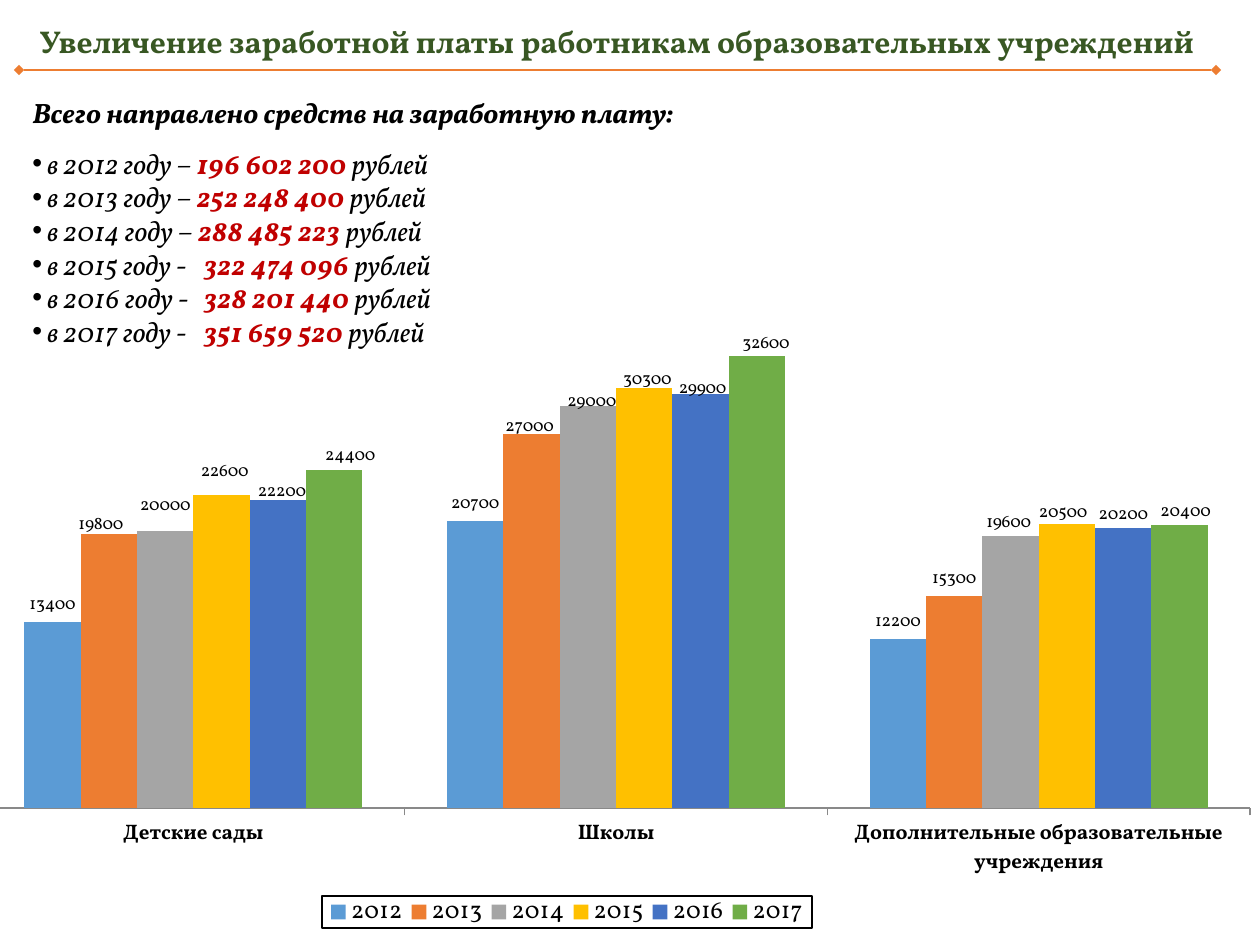
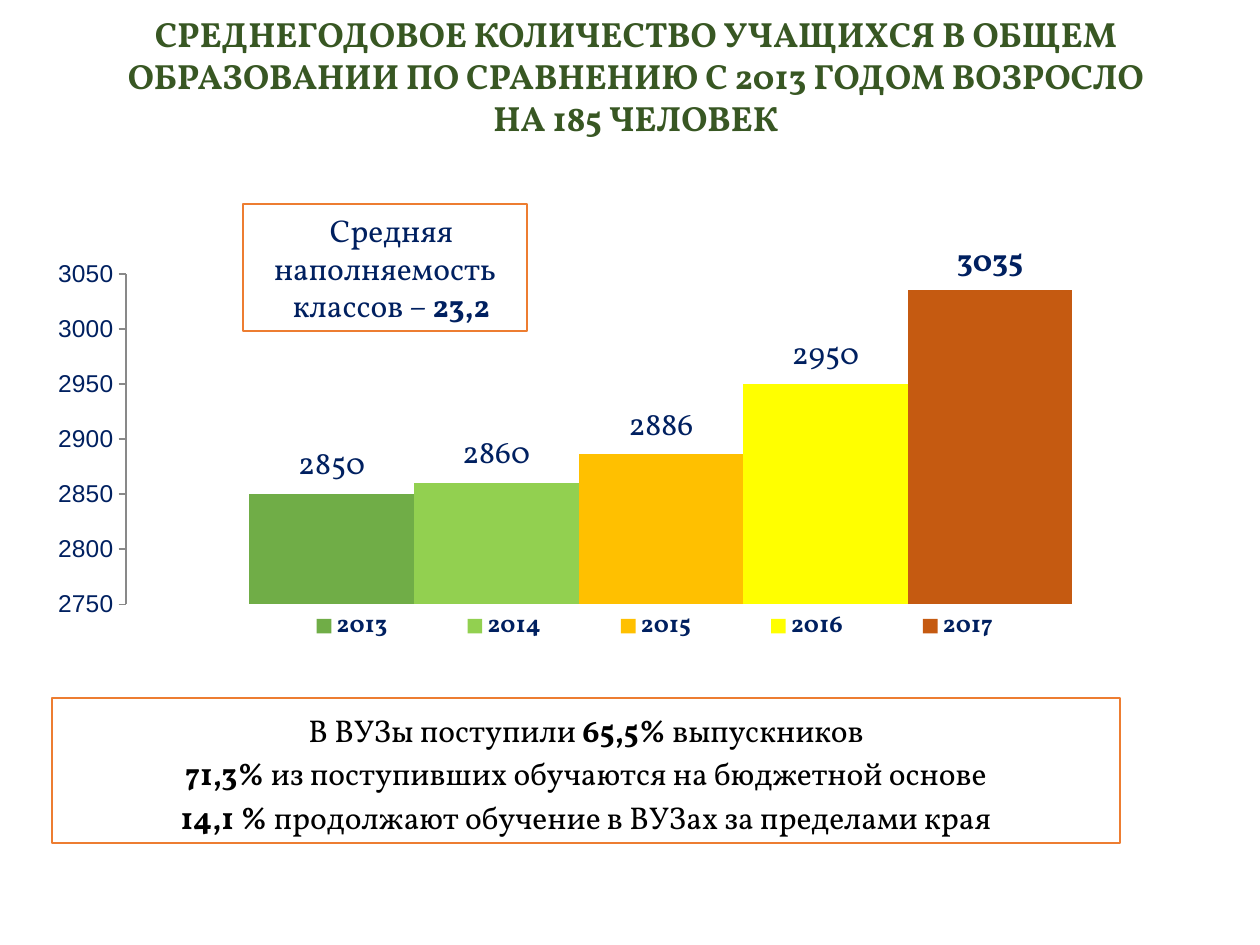
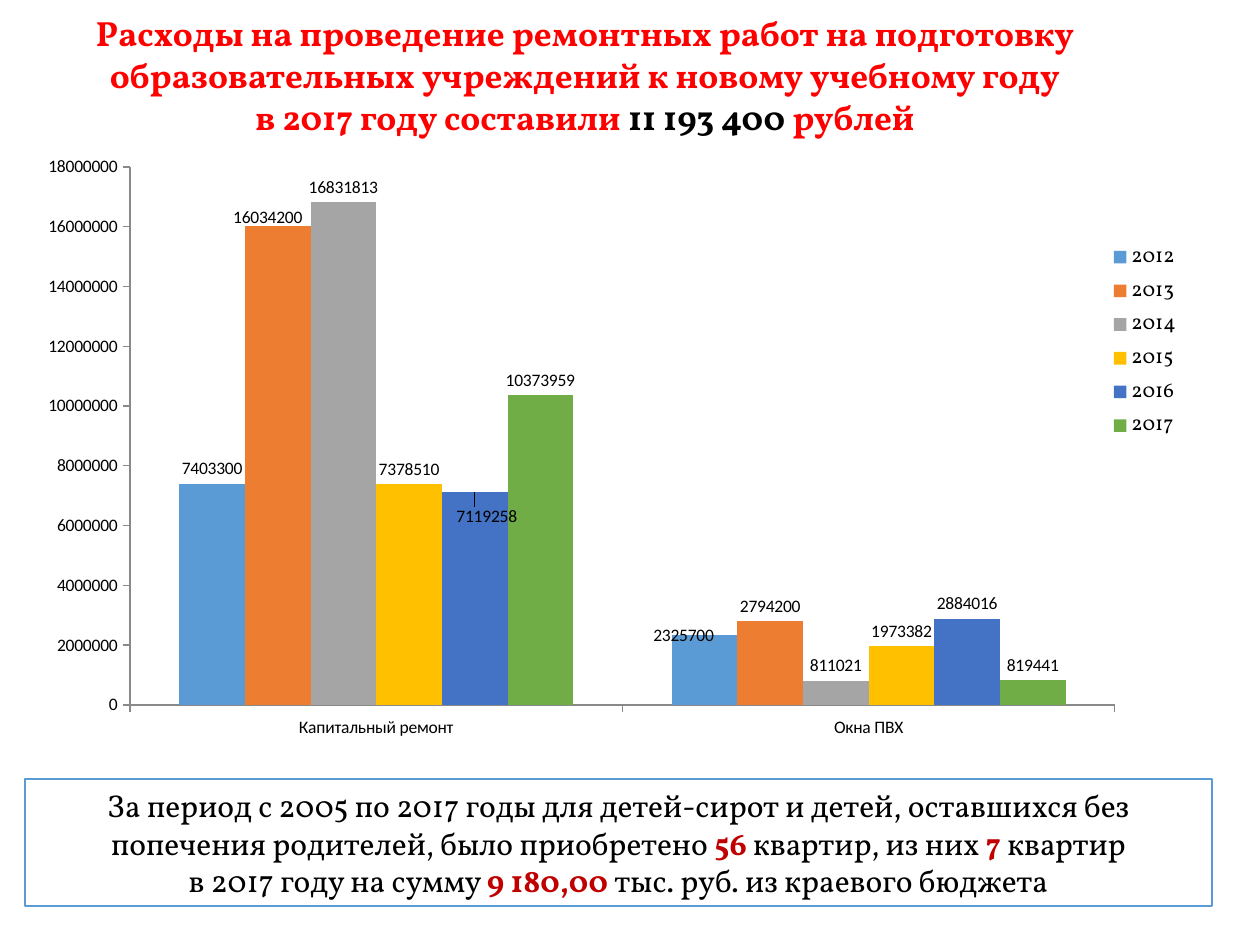
from pptx import Presentation
from pptx.chart.data import CategoryChartData
from pptx.dml.color import RGBColor
from pptx.enum.chart import XL_CHART_TYPE, XL_LABEL_POSITION, XL_LEGEND_POSITION, XL_TICK_MARK
from pptx.enum.shapes import MSO_CONNECTOR, MSO_SHAPE
from pptx.enum.text import MSO_ANCHOR, MSO_AUTO_SIZE, PP_ALIGN
from pptx.oxml import parse_xml
from pptx.oxml.ns import nsdecls, qn
from pptx.util import Pt

EMU_PER_PX = 914400 / 126
COLORS = {
    "black": "000000", "white": "FFFFFF", "title": "385723", "alert": "FF0000",
    "accent": "C00000", "navy": "002060", "axis": "898989", "blue": "5B9BD5",
    "orange": "ED7D31", "gray": "A5A5A5", "amber": "FFC000", "royal": "4472C4",
    "green": "70AD47", "lime": "92D050", "yellow": "FFFF00", "rust": "C55A11",
}
YEAR_COLORS = {"2012": "blue", "2013": "orange", "2014": "gray",
               "2015": "amber", "2016": "royal", "2017": "green"}
SERIF = "Vollkorn"
TITLE = {"size": 20, "bold": True, "color": "title"}
BODY = {"size": 18}
NUMBER = {"bold": True, "color": "accent"}
BOLD = {"bold": True}


class Deck:
    """Hold the shared style and the current slide, with a method per element."""

    def __init__(self, width, height):
        self.presentation = Presentation()
        self.presentation.slide_width = self.emu(width)
        self.presentation.slide_height = self.emu(height)
        self.slide = None

    @staticmethod
    def emu(px):
        """Turn px into EMU."""
        return round(px * EMU_PER_PX)

    @staticmethod
    def rgb(name):
        """Give the named colour."""
        return RGBColor.from_string(COLORS[name])

    def box(self, bounds):
        """Turn left, top, width and height into EMU."""
        return [self.emu(px) for px in bounds]

    def add_slide(self):
        """Start a blank slide."""
        self.slide = self.presentation.slides.add_slide(self.presentation.slide_layouts[6])

    def style(self, font, values):
        """Set font attributes from a dict over the shared defaults."""
        for name, value in {"name": SERIF, "size": 10, "color": "black", **values}.items():
            if name == "color":
                font.color.rgb = self.rgb(value)
            else:
                setattr(font, name, Pt(value) if name == "size" else value)

    def fill_text(self, frame, paragraphs, base, align=PP_ALIGN.CENTER, spacing=1.0, indent=0):
        """Fill a text frame; a run is a string or a (string, format) pair."""
        frame.word_wrap = True
        frame.auto_size = MSO_AUTO_SIZE.SHAPE_TO_FIT_TEXT
        for index, runs in enumerate(paragraphs):
            paragraph = frame.paragraphs[0] if index == 0 else frame.add_paragraph()
            paragraph.alignment = align
            paragraph.line_spacing = spacing
            if indent:
                paragraph._p.get_or_add_pPr().set("indent", str(self.emu(indent)))
            for item in runs:
                text, extra = (item, {}) if isinstance(item, str) else item
                run = paragraph.add_run()
                run.text = text
                self.style(run.font, {**base, **extra})

    def text(self, bounds, paragraphs, base, **options):
        """Add a text box."""
        frame = self.slide.shapes.add_textbox(*self.box(bounds)).text_frame
        self.fill_text(frame, paragraphs, base, **options)
        return frame

    def bullet(self, paragraph, indent, tab):
        """Give a paragraph a hanging bullet and one tab stop."""
        properties = paragraph._p.get_or_add_pPr()
        properties.set("marL", str(self.emu(indent)))
        properties.set("indent", str(-self.emu(indent)))
        for xml in (f'<a:buFont {nsdecls("a")} typeface="Arial"/>',
                    f'<a:buChar {nsdecls("a")} char="•"/>',
                    f'<a:tabLst {nsdecls("a")}><a:tab pos="{self.emu(tab)}" algn="l"/></a:tabLst>'):
            properties.append(parse_xml(xml))

    def panel(self, bounds, line, paragraphs, base, **options):
        """Add an outlined white rectangle with text."""
        shape = self.slide.shapes.add_shape(MSO_SHAPE.RECTANGLE, *self.box(bounds))
        shape.shadow.inherit = False
        shape.fill.solid()
        shape.fill.fore_color.rgb = self.rgb("white")
        shape.line.color.rgb = self.rgb(line)
        shape.line.width = Pt(1)
        shape.text_frame.vertical_anchor = MSO_ANCHOR.MIDDLE
        self.fill_text(shape.text_frame, paragraphs, base, **options)

    def rule(self, left, right, top, color):
        """Add a horizontal line with diamond ends."""
        connector = self.slide.shapes.add_connector(
            MSO_CONNECTOR.STRAIGHT, *self.box((left, top, right, top)))
        connector.line.color.rgb = self.rgb(color)
        connector.line.width = Pt(1)
        for end in ("headEnd", "tailEnd"):
            connector.line._ln.append(parse_xml(f'<a:{end} {nsdecls("a")} type="diamond"/>'))
        connector._element.spPr.append(parse_xml(f'<a:effectLst {nsdecls("a")}/>'))

    @staticmethod
    def layout(parent, index, values, target=""):
        """Place a chart part by fractions of the chart area."""
        for old in parent.findall(qn("c:layout")):
            parent.remove(old)
        modes = "" if len(values) == 2 else '<c:xMode val="edge"/><c:yMode val="edge"/>'
        sizes = "".join(f'<c:{tag} val="{value:.4f}"/>' for tag, value in zip("xywh", values))
        parent.insert(index, parse_xml(
            f'<c:layout {nsdecls("c")}><c:manualLayout>{target}{modes}{sizes}'
            '</c:manualLayout></c:layout>'))

    def chart(self, bounds, categories, values, colors, plot_area, legend_area, scale,
              label_font, legend_font, hidden=None, axis_fonts=None, offsets=None,
              point_fonts=None, legend_position=XL_LEGEND_POSITION.BOTTOM):
        """Add a clustered column chart; areas and label offsets are in px."""
        left, top, width, height = bounds
        data = CategoryChartData()
        data.categories = categories
        for name, numbers in values.items():
            data.add_series(name, numbers)
        chart = self.slide.shapes.add_chart(
            XL_CHART_TYPE.COLUMN_CLUSTERED, *self.box(bounds), data).chart
        chart.has_title = False
        self.style(chart.font, {"name": "Calibri"})

        def fractions(area):
            return ((area[0] - left) / width, (area[1] - top) / height,
                    area[2] / width, area[3] / height)

        plot = chart.plots[0]
        for name, value in {"gap_width": 150, "overlap": 0, "vary_by_categories": False}.items():
            setattr(plot, name, value)
        self.layout(chart._chartSpace.chart.plotArea, 0, fractions(plot_area),
                    '<c:layoutTarget val="inner"/>')
        self.axes(chart, scale, hidden, axis_fonts or {})

        chart.has_legend = True
        legend = chart.legend
        legend.position = legend_position
        legend.include_in_layout = False
        self.layout(legend._element, 1, fractions(legend_area))
        self.style(legend.font, legend_font)

        for series in plot.series:
            series.format.fill.solid()
            series.format.fill.fore_color.rgb = self.rgb(colors[series.name])
            font = {**label_font, **(point_fonts or {}).get(series.name, {})}
            labels = series.data_labels
            for name, value in {"show_value": True, "number_format": "0",
                                "number_format_is_linked": False,
                                "position": XL_LABEL_POSITION.OUTSIDE_END}.items():
                setattr(labels, name, value)
            self.style(labels.font, font)
            for index, offset in enumerate((offsets or {}).get(series.name, ())):
                if offset:
                    label = series.points[index].data_label
                    label.position = XL_LABEL_POSITION.OUTSIDE_END
                    self.style(label.font, font)
                    element = series._element.xpath(f"c:dLbls/c:dLbl[c:idx/@val='{index}']")[0]
                    self.layout(element, 1, (offset[0] / width, offset[1] / height))
        return chart

    def axes(self, chart, scale, hidden, fonts):
        """Format both axes and set the value scale."""
        axes = {"category": chart.category_axis, "value": chart.value_axis}
        for name, axis in axes.items():
            axis.has_major_gridlines = False
            axis.major_tick_mark = XL_TICK_MARK.OUTSIDE
            axis.minor_tick_mark = XL_TICK_MARK.NONE
            axis.format.line.color.rgb = self.rgb("axis")
            axis.visible = name != hidden
            self.style(axis.tick_labels.font, {"name": "Calibri", **fonts.get(name, {})})
        for name, value in zip(("minimum_scale", "maximum_scale", "major_unit"), scale):
            setattr(axes["value"], name, value)

    def legend_border(self, chart, color):
        """Outline the legend of a chart."""
        overlay = chart.legend._element.find(qn("c:overlay"))
        overlay.addnext(parse_xml(
            f'<c:spPr {nsdecls("c", "a")}><a:ln w="9525"><a:solidFill>'
            f'<a:srgbClr val="{COLORS[color]}"/></a:solidFill></a:ln></c:spPr>'))


def add_salaries(deck):
    """Build the slide on salaries."""
    deck.add_slide()
    deck.text((-44, 16, 1322, 50),
              [["Увеличение заработной платы работникам образовательных учреждений"]],
              {**TITLE, "size": 18})
    totals = [("2012", "– ", "196 602 200"), ("2013", "– ", "252 248 400"),
              ("2014", "– ", "288 485 223"), ("2015", "-\t", "322 474 096"),
              ("2016", "-\t", "328 201 440"), ("2017", "-\t", "351 659 520")]
    paragraphs = [[("Всего направлено средств на заработную плату:", BOLD)]]
    paragraphs += [[f"в {year} году {dash}", (f"{total} ", NUMBER), "рублей"]
                   for year, dash, total in totals]
    frame = deck.text((20, 73, 1250, 318), paragraphs, {"size": 16, "italic": True},
                      align=PP_ALIGN.LEFT)
    for paragraph in frame.paragraphs[:2]:
        paragraph.line_spacing = 1.5
    for paragraph in frame.paragraphs[1:]:
        deck.bullet(paragraph, indent=15, tab=171)
    chart = deck.chart(
        (-44, 310, 1322, 635),
        ["Детские сады", "Школы", "Дополнительные образовательные учреждения"],
        {"2012": (13400, 20700, 12200), "2013": (19800, 27000, 15300),
         "2014": (20000, 29000, 19600), "2015": (22600, 30300, 20500),
         "2016": (22200, 29900, 20200), "2017": (24400, 32600, 20400)},
        YEAR_COLORS, plot_area=(-18, 323, 1268, 485), legend_area=(322, 895, 490, 32),
        scale=(0, 35000, 5000), label_font={}, legend_font={"size": 14}, hidden="value",
        axis_fonts={"category": {"name": SERIF, "size": 12, "bold": True}},
        offsets={"2013": ((-8, 9), (-2, 11)), "2014": ((0, -8), (4, 13), (-2, 4)),
                 "2015": ((3, -5), (3, 9), (-4, 7)), "2016": ((4, 9), (2, 13), (0, 4)),
                 "2017": ((16, 4), (9, 5), (6, 4))})
    deck.legend_border(chart, "black")
    deck.rule(19, 1216, 70, "orange")


def add_pupils(deck):
    """Build the slide on the number of pupils."""
    deck.add_slide()
    deck.text((91, 6, 1090, 140),
              [["СРЕДНЕГОДОВОЕ КОЛИЧЕСТВО УЧАЩИХСЯ В ОБЩЕМ ОБРАЗОВАНИИ "
                "ПО СРАВНЕНИЮ С 2013 ГОДОМ ВОЗРОСЛО НА 185 ЧЕЛОВЕК"]], TITLE)
    deck.chart(
        (0, 241, 1202, 421), ["1"],
        {"2013": (2850,), "2014": (2860,), "2015": (2886,), "2016": (2950,), "2017": (3035,)},
        {"2013": "green", "2014": "lime", "2015": "amber", "2016": "yellow", "2017": "rust"},
        plot_area=(126, 272, 1070, 332), legend_area=(245, 609, 820, 30),
        scale=(2750, 3050, 50), label_font={"size": 18, "color": "navy"},
        legend_font={"size": 14, "bold": True, "color": "navy"}, hidden="category",
        axis_fonts={"value": {"name": "Arial", "size": 14, "color": "navy"}},
        point_fonts={"2017": BOLD})
    deck.panel((243, 204, 284, 127), "orange",
               [["Средняя наполняемость"], ["классов – ", ("23,2", BOLD)]],
               {**BODY, "color": "navy"}, indent=13)
    deck.panel((52, 698, 1068, 145), "orange",
               [["В ВУЗы поступили ", ("65,5%", BOLD), " выпускников"],
                [("71,3% ", BOLD), "из поступивших обучаются на бюджетной основе"],
                [("14,1 %", BOLD), " продолжают обучение в ВУЗах за пределами края"]],
               BODY, spacing=1.15)


def add_repairs(deck):
    """Build the slide on repair costs."""
    deck.add_slide()
    deck.text((-15, 5, 1200, 140),
              [["Расходы на проведение ремонтных работ на подготовку "
                "образовательных учреждений к новому учебному году"],
               ["в 2017 году составили ", ("11 193 400 ", {"color": "black"}), "рублей"]],
              {**TITLE, "color": "alert"})
    deck.chart(
        (25, 145, 1201, 605), ["Капитальный ремонт", "Окна ПВХ"],
        {"2012": (7403300, 2325700), "2013": (16034200, 2794200), "2014": (16831813, 811021),
         "2015": (7378510, 1973382), "2016": (7119258, 2884016), "2017": (10373959, 819441)},
        YEAR_COLORS, plot_area=(130, 167, 985, 538), legend_area=(1100, 238, 90, 207),
        scale=(0, 18000000, 2000000), label_font={"name": "Calibri"},
        legend_font={"size": 12}, legend_position=XL_LEGEND_POSITION.RIGHT,
        offsets={"2012": (None, (-21, 15)), "2013": ((-10, 7),), "2016": ((12, 39),)})
    deck.panel((25, 779, 1187, 127), "blue",
               [["За период с 2005 по 2017 годы для детей-сирот и детей, оставшихся без "
                 "попечения родителей, было приобретено ", ("56", NUMBER),
                 " квартир, из них ", ("7", NUMBER), " квартир"],
                ["в 2017 году на сумму ", ("9 180,00 ", NUMBER),
                 "тыс. руб. из краевого бюджета"]], BODY)


def main():
    """Build and save the presentation."""
    deck = Deck(1260, 945)
    for add in (add_salaries, add_pupils, add_repairs):
        add(deck)
    deck.presentation.save("out.pptx")


if __name__ == "__main__":
    main()
